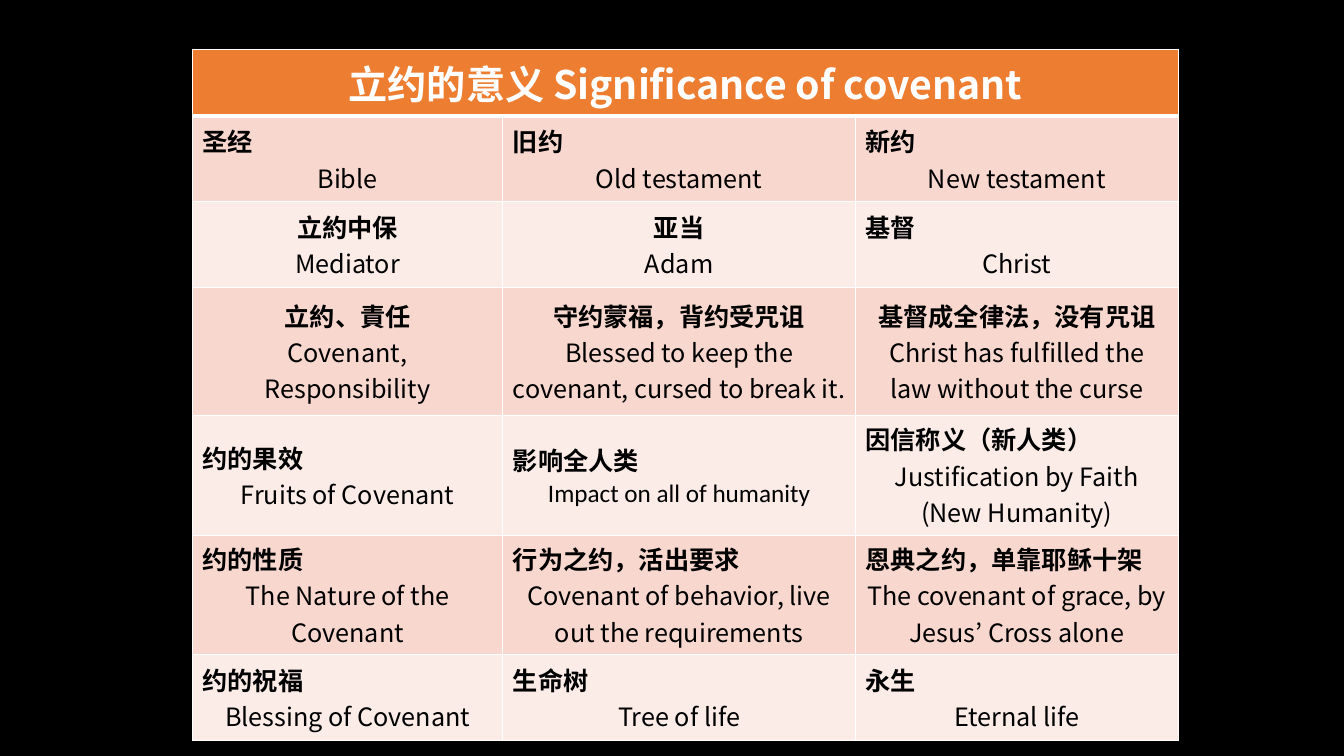
from dataclasses import dataclass

from lxml.etree import SubElement
from pptx import Presentation
from pptx.dml.color import RGBColor
from pptx.enum.text import MSO_ANCHOR, PP_ALIGN
from pptx.oxml.ns import qn
from pptx.table import Table, _Cell
from pptx.util import Cm, Pt

CJK_FONT = "Noto Sans CJK JP"
WHITE, BLACK, ORANGE = "FFFFFF", "000000", "ED7D31"
BANDS = ("F8D7CE", "FCECE8")
COLUMN_WIDTHS = (7.82, 8.89, 8.13)
ROW_HEIGHTS = (1.65, 2.16, 2.16, 3.23, 2.46, 2.46, 2.16)
TITLE = "立约的意义 Significance of covenant"


@dataclass
class Entry:
    chinese: str
    english: str
    chinese_align: PP_ALIGN = PP_ALIGN.LEFT
    english_font: str = CJK_FONT


CENTER = PP_ALIGN.CENTER
ENTRIES = (
    (Entry("圣经", "Bible"), Entry("旧约", "Old testament"), Entry("新约", "New testament")),
    (Entry("立約中保", "Mediator", CENTER), Entry("亚当", "Adam", CENTER), Entry("基督", "Christ")),
    (
        Entry("立約、責任", "Covenant, Responsibility", CENTER),
        Entry("守约蒙福，背约受咒诅", "Blessed to keep the covenant, cursed to break it.", CENTER),
        Entry("基督成全律法，没有咒诅", "Christ has fulfilled the law without the curse", CENTER),
    ),
    (
        Entry("约的果效", "Fruits of Covenant"),
        Entry("影响全人类", "Impact on all of humanity", english_font="Calibri"),
        Entry("因信称义（新人类）", "Justification by Faith\n(New Humanity)"),
    ),
    (
        Entry("约的性质", "The Nature of the Covenant"),
        Entry("行为之约，活出要求", "Covenant of behavior, live out the requirements"),
        Entry("恩典之约，单靠耶稣十架", "The covenant of grace, by Jesus’ Cross alone"),
    ),
    (
        Entry("约的祝福", "Blessing of Covenant"),
        Entry("生命树", "Tree of life"),
        Entry("永生", "Eternal life"),
    ),
)


def color(value: str) -> RGBColor:
    return RGBColor.from_string(value)


def style_cell(cell: _Cell, fill: str, top: float = 1, bottom: float = 1) -> None:
    """Draw white borders, then fill the cell and centre it vertically."""
    cell.vertical_anchor = MSO_ANCHOR.MIDDLE
    properties = cell._tc.get_or_add_tcPr()
    for side, width in (("L", 1), ("R", 1), ("T", top), ("B", bottom)):
        line = SubElement(properties, qn(f"a:ln{side}"), w=str(Pt(width)))
        solid = SubElement(line, qn("a:solidFill"))
        SubElement(solid, qn("a:srgbClr"), val=WHITE)
    cell.fill.solid()
    cell.fill.fore_color.rgb = color(fill)


def add_line(cell: _Cell, text: str, align: PP_ALIGN, bold: bool,
             size: float = 18, font_name: str = CJK_FONT, ink: str = BLACK) -> None:
    """Write one paragraph, using the empty first paragraph if there is one."""
    frame = cell.text_frame
    paragraph = frame.add_paragraph() if frame.text else frame.paragraphs[0]
    paragraph.text = text
    paragraph.alignment = align
    font = paragraph.font
    font.size, font.bold, font.name = Pt(size), bold, font_name
    font.color.rgb = color(ink)
    SubElement(font._element, qn("a:ea"), typeface=CJK_FONT)


def fill_entry(cell: _Cell, entry: Entry) -> None:
    add_line(cell, entry.chinese, entry.chinese_align, bold=True)
    for text in entry.english.split("\n"):
        add_line(cell, text, CENTER, bold=False, font_name=entry.english_font)


def fill_table(table: Table) -> None:
    for column, width in zip(table.columns, COLUMN_WIDTHS):
        column.width = Cm(width)
    for row, height in zip(table.rows, ROW_HEIGHTS):
        row.height = Cm(height)

    # Header across all columns
    header = table.cell(0, 0)
    header.merge(table.cell(0, len(COLUMN_WIDTHS) - 1))
    for cell in table.rows[0].cells:
        style_cell(cell, ORANGE, bottom=3)
    add_line(header, TITLE, CENTER, bold=True, size=28, ink=WHITE)

    # Banded body
    for row_index, entries in enumerate(ENTRIES, start=1):
        for column_index, entry in enumerate(entries):
            cell = table.cell(row_index, column_index)
            style_cell(cell, BANDS[(row_index - 1) % 2], top=3 if row_index == 1 else 1)
            fill_entry(cell, entry)


def main() -> None:
    presentation = Presentation()
    presentation.slide_width, presentation.slide_height = Cm(33.87), Cm(19.05)
    slide = presentation.slides.add_slide(presentation.slide_layouts[6])

    # Black background
    slide.background.fill.solid()
    slide.background.fill.fore_color.rgb = color(BLACK)

    # Covenant table
    shape = slide.shapes.add_table(
        len(ROW_HEIGHTS), len(COLUMN_WIDTHS), Cm(4.85), Cm(1.24),
        Cm(sum(COLUMN_WIDTHS)), Cm(sum(ROW_HEIGHTS)),
    )
    fill_table(shape.table)
    presentation.save("out.pptx")


if __name__ == "__main__":
    main()
